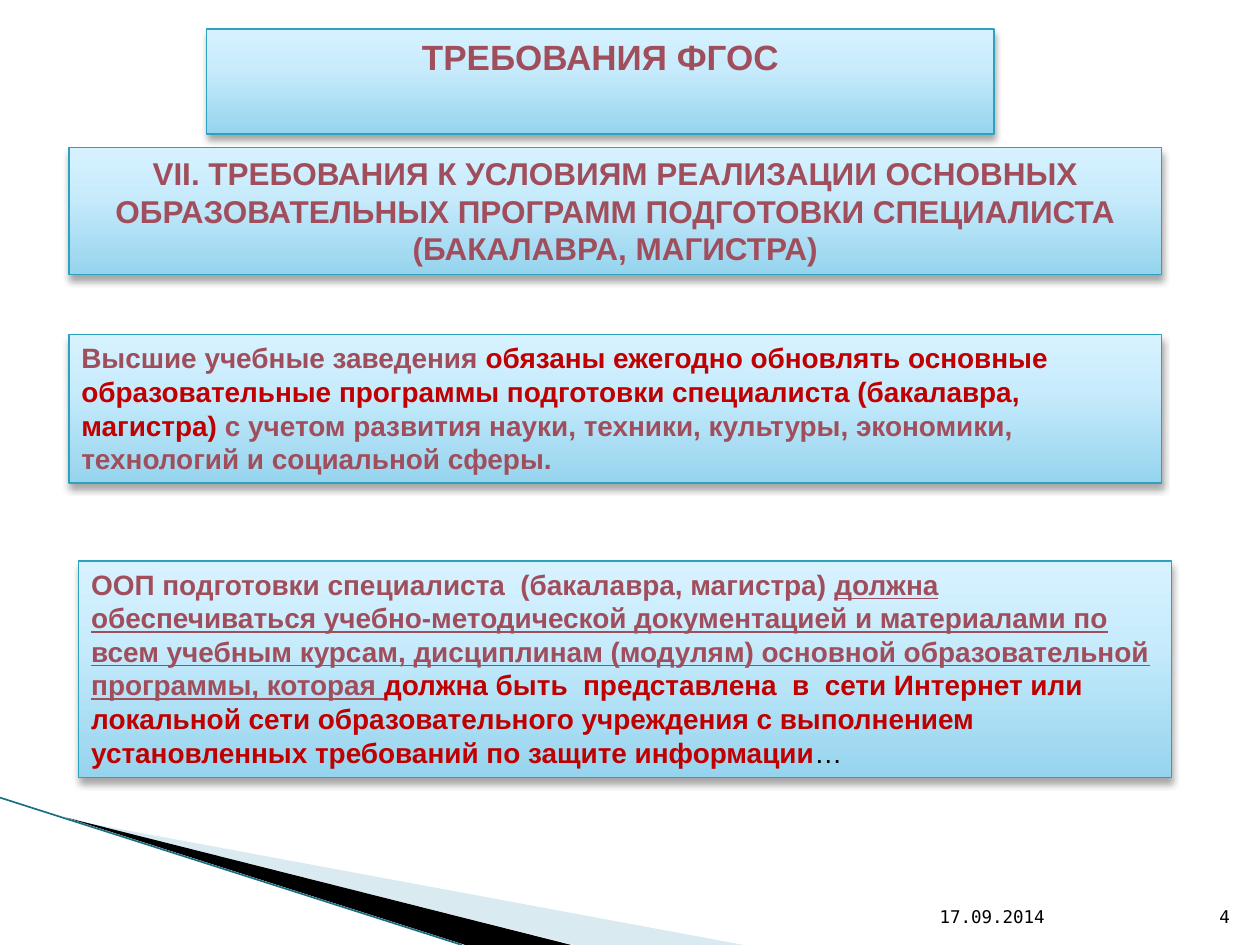
import pptx
import pptx.dml.color
import pptx.enum.shapes
import pptx.enum.text
import pptx.oxml
import pptx.oxml.ns
import pptx.util

Pt = pptx.util.Pt
RGBColor = pptx.dml.color.RGBColor
ANCHOR = pptx.enum.text.MSO_ANCHOR
ALIGN = pptx.enum.text.PP_ALIGN

WINE = RGBColor(0xA1, 0x4E, 0x5C)
RED = RGBColor(0xC0, 0x00, 0x00)
BLACK = RGBColor(0x00, 0x00, 0x00)
TEAL = RGBColor(0x2D, 0xA2, 0xBF)
DARK_TEAL = RGBColor(0x1B, 0x6F, 0x85)
PALE_BLUE = RGBColor(0xD9, 0xEA, 0xF1)
PANEL_STOPS = (
    (0, RGBColor(0x96, 0xD4, 0xEE)),
    (65, RGBColor(0xC9, 0xEC, 0xFC)),
    (100, RGBColor(0xD7, 0xF2, 0xFF)),
)
NS = pptx.oxml.ns.nsdecls("a")


def add_run(p, text, font="Arial", size=16, color=WINE, bold=True, underline=False):
    r = p.add_run()
    r.text = text
    r.font.name = font
    r.font.size = Pt(size)
    r.font.color.rgb = color
    r.font.bold = bold
    r.font.underline = underline


class Deck:
    def __init__(self):
        self.prs = pptx.Presentation()
        self.prs.slide_width, self.prs.slide_height = Pt(720), Pt(540)
        self.s = self.prs.slides.add_slide(self.prs.slide_layouts[5])

    def style_panel(self, sp):
        sp.line.color.rgb = TEAL
        sp.line.width = Pt(0.75)
        sp.shadow.inherit = False
        stops = "".join(
            f'<a:gs pos="{pos * 1000}"><a:srgbClr val="{color}"/></a:gs>'
            for pos, color in PANEL_STOPS
        )
        spPr = sp._element.spPr
        ln = spPr.find(pptx.oxml.ns.qn("a:ln"))
        ln.addprevious(pptx.oxml.parse_xml(
            f'<a:gradFill {NS} rotWithShape="1"><a:gsLst>{stops}</a:gsLst>'
            '<a:lin ang="16200000" scaled="0"/></a:gradFill>'
        ))
        effects = spPr.find(pptx.oxml.ns.qn("a:effectLst"))
        effects.append(pptx.oxml.parse_xml(
            f'<a:outerShdw {NS} blurRad="{Pt(4)}" dist="{Pt(3)}" dir="5400000" '
            'rotWithShape="0"><a:srgbClr val="000000"><a:alpha val="35000"/>'
            '</a:srgbClr></a:outerShdw>'
        ))

    def fill_text(self, sp, runs, align, anchor):
        tf = sp.text_frame
        tf.word_wrap = True
        tf.vertical_anchor = anchor
        p = tf.paragraphs[0]
        p.alignment = align
        for text, fmt in runs:
            add_run(p, text, **fmt)

    def title(self, x, y, w, h, runs):
        sp = self.s.shapes.title
        sp.left, sp.top, sp.width, sp.height = Pt(x), Pt(y), Pt(w), Pt(h)
        self.style_panel(sp)
        self.fill_text(sp, runs, ALIGN.CENTER, ANCHOR.TOP)
        sp.text_frame.auto_size = pptx.enum.text.MSO_AUTO_SIZE.SHAPE_TO_FIT_TEXT

    def panel(self, x, y, w, h, runs, align=ALIGN.LEFT):
        sp = self.s.shapes.add_shape(
            pptx.enum.shapes.MSO_SHAPE.RECTANGLE, Pt(x), Pt(y), Pt(w), Pt(h))
        self.style_panel(sp)
        self.fill_text(sp, runs, align, ANCHOR.TOP)
        sp.text_frame.auto_size = pptx.enum.text.MSO_AUTO_SIZE.SHAPE_TO_FIT_TEXT

    def footer(self, x, w, text, align=ALIGN.LEFT):
        sp = self.s.shapes.add_textbox(Pt(x), Pt(504.7), Pt(w), Pt(28.8))
        fmt = dict(font="DejaVu Sans Mono", size=10, color=BLACK, bold=False)
        self.fill_text(sp, [(text, fmt)], align, ANCHOR.BOTTOM)

    def wedge(self, points, color):
        start, *rest = [(Pt(x), Pt(y)) for x, y in points]
        fb = self.s.shapes.build_freeform(*start)
        fb.add_line_segments(rest, close=True)
        sp = fb.convert_to_shape()
        sp.shadow.inherit = False
        sp.fill.solid()
        sp.fill.fore_color.rgb = color
        sp.line.fill.background()

    def line(self, x1, y1, x2, y2):
        c = self.s.shapes.add_connector(
            pptx.enum.shapes.MSO_CONNECTOR.STRAIGHT, Pt(x1), Pt(y1), Pt(x2), Pt(y2))
        c.line.color.rgb = DARK_TEAL
        c.line.width = Pt(0.95)
        c._element.spPr.append(pptx.oxml.parse_xml(f"<a:effectLst {NS}/>"))


def main():
    deck = Deck()
    deck.wedge([(39.6, 468.4), (425, 540), (328.3, 540)], PALE_BLUE)
    deck.wedge([(38.2, 467.3), (326.5, 540), (266, 540)], BLACK)
    deck.line(0, 455.8, 264, 540)
    deck.footer(529.9, 151.2, "17.09.2014")
    deck.footer(681.1, 28.8, "4", ALIGN.RIGHT)

    deck.title(118.1, 16.6, 450, 31.5, [("ТРЕБОВАНИЯ ФГОС", dict(size=20))])
    deck.panel(39.4, 84.3, 624.4, 72.7, [
        ("VII. ТРЕБОВАНИЯ К УСЛОВИЯМ РЕАЛИЗАЦИИ ОСНОВНЫХ ОБРАЗОВАТЕЛЬНЫХ "
         "ПРОГРАММ ПОДГОТОВКИ СПЕЦИАЛИСТА (БАКАЛАВРА, МАГИСТРА)", dict(size=18)),
    ], ALIGN.CENTER)
    deck.panel(39.4, 191.3, 624.4, 84.8, [
        ("Высшие учебные заведения ", {}),
        ("обязаны ежегодно обновлять основные образовательные программы "
         "подготовки специалиста (бакалавра, магистра) ", dict(color=RED)),
        ("с учетом развития науки, техники, культуры, экономики, "
         "технологий и социальной сферы.", {}),
    ])
    deck.panel(45, 320.6, 624.4, 123.8, [
        ("ООП подготовки специалиста  (бакалавра, магистра) ", {}),
        ("должна обеспечиваться учебно-методической документацией и материалами "
         "по всем учебным курсам, дисциплинам (модулям) основной образовательной "
         "программы, которая ", dict(underline=True)),
        ("должна быть  представлена  в  сети Интернет или локальной сети "
         "образовательного учреждения с выполнением установленных требований "
         "по защите информации", dict(color=RED)),
        ("…", dict(color=BLACK, bold=False)),
    ])
    deck.prs.save("out.pptx")


if __name__ == "__main__":
    main()
